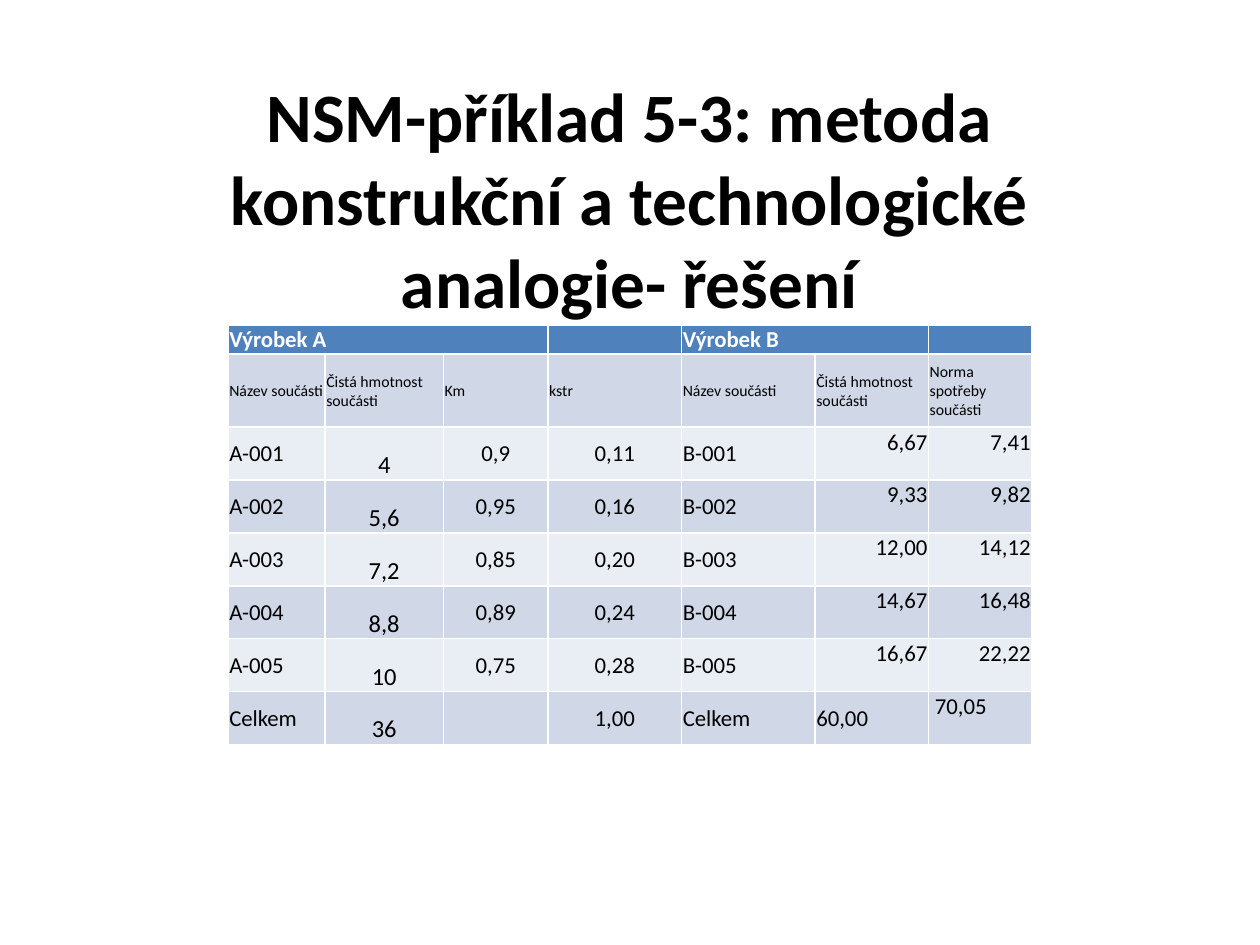
from lxml import etree
from pptx import Presentation
from pptx import util as u
from pptx.dml.color import RGBColor
from pptx.enum import text as t
from pptx.oxml.ns import qn

HEAD = "NSM-příklad 5-3: metoda konstrukční a technologické analogie- řešení"
ROWS = [
    ["Výrobek A", "", "", "", "Výrobek B", "", ""],
    ["Název součásti", "Čistá hmotnost součásti", "Km", "kstr",
     "Název součásti", "Čistá hmotnost součásti", "Norma spotřeby součásti"],
    ["A-001", "4", "0,9", "0,11", "B-001", "6,67", "7,41"],
    ["A-002", "5,6", "0,95", "0,16", "B-002", "9,33", "9,82"],
    ["A-003", "7,2", "0,85", "0,20", "B-003", "12,00", "14,12"],
    ["A-004", "8,8", "0,89", "0,24", "B-004", "14,67", "16,48"],
    ["A-005", "10", "0,75", "0,28", "B-005", "16,67", "22,22"],
    ["Celkem", "36", "", "1,00", "Celkem", "60,00", "\u00a070,05"],
]
WIDE = [0.77, 0.94, 0.83, 1.06, 1.06, 0.9, 0.82]
HIGH = [0.22, 0.58] + [0.42] * 6
SPANS = [(0, 2), (4, 5)]
BLUE, DARK, PALE = "4F81BD", "D0D8E8", "E9EDF4"
PAD = {"margin_left": u.Inches(0.01), "margin_right": u.Inches(0.01),
       "margin_top": u.Inches(0.01), "margin_bottom": 0}
LEFT, MID, RIGHT = t.PP_ALIGN.LEFT, t.PP_ALIGN.CENTER, t.PP_ALIGN.RIGHT
TOP, CORE, LOW = t.MSO_ANCHOR.TOP, t.MSO_ANCHOR.MIDDLE, t.MSO_ANCHOR.BOTTOM
PLACE = [(LEFT, CORE), (MID, LOW), (MID, CORE), (MID, CORE),
         (LEFT, CORE), (RIGHT, TOP), (RIGHT, TOP)]
LAST = {5: (LEFT, CORE), 6: (LEFT, TOP)}


def tint(hue):
    return RGBColor.from_string(hue)


def apply(item, form):
    for key, val in form.items():
        setattr(item, key, val)


def write(para, words, size, hue, bold, align):
    para.alignment = align
    if not words:
        etree.SubElement(para._p, qn("a:endParaRPr"), sz=str(size * 100))
        return
    run = para.add_run()
    run.text = words
    apply(run.font, {"name": "Calibri", "size": u.Pt(size), "bold": bold})
    run.font.color.rgb = tint(hue)


def style(row, col):
    if row == 0:
        return 13, "FFFFFF", True, LEFT, CORE, BLUE
    fill = PALE if row % 2 == 0 and row < 7 else DARK
    if row == 1:
        return 9, "000000", False, LEFT, CORE, fill
    spot = LAST.get(col, PLACE[col]) if row == 7 else PLACE[col]
    return 14 if col == 1 else 13, "000000", False, *spot, fill


def title(slide):
    box = slide.shapes.title
    apply(box, {"left": u.Inches(1.62), "top": u.Inches(1.1),
                "width": u.Inches(6.75), "height": u.Inches(0.94)})
    apply(box.text_frame, {"word_wrap": True, "vertical_anchor": CORE,
                           "auto_size": t.MSO_AUTO_SIZE.NONE})
    write(box.text_frame.paragraphs[0], HEAD, 39.6, "000000", True, MID)


def grid(slide):
    table = slide.shapes.add_table(
        len(ROWS), len(WIDE), u.Inches(1.81), u.Inches(2.58),
        u.Inches(sum(WIDE)), u.Inches(sum(HIGH))).table
    for col, wide in zip(table.columns, WIDE):
        col.width = u.Inches(wide)
    for row, high in zip(table.rows, HIGH):
        row.height = u.Inches(high)
    for r, row in enumerate(ROWS):
        for c, words in enumerate(row):
            size, hue, bold, align, anchor, fill = style(r, c)
            cell = table.cell(r, c)
            apply(cell, {**PAD, "vertical_anchor": anchor})
            cell.fill.solid()
            cell.fill.fore_color.rgb = tint(fill)
            write(cell.text_frame.paragraphs[0], words, size, hue, bold, align)
    for start, end in SPANS:
        table.cell(0, start).merge(table.cell(0, end))


def main():
    deck = Presentation()
    apply(deck, {"slide_width": u.Inches(10), "slide_height": u.Inches(7.5)})
    slide = deck.slides.add_slide(deck.slide_layouts[5])
    title(slide)
    grid(slide)
    deck.save("out.pptx")


if __name__ == "__main__":
    main()
